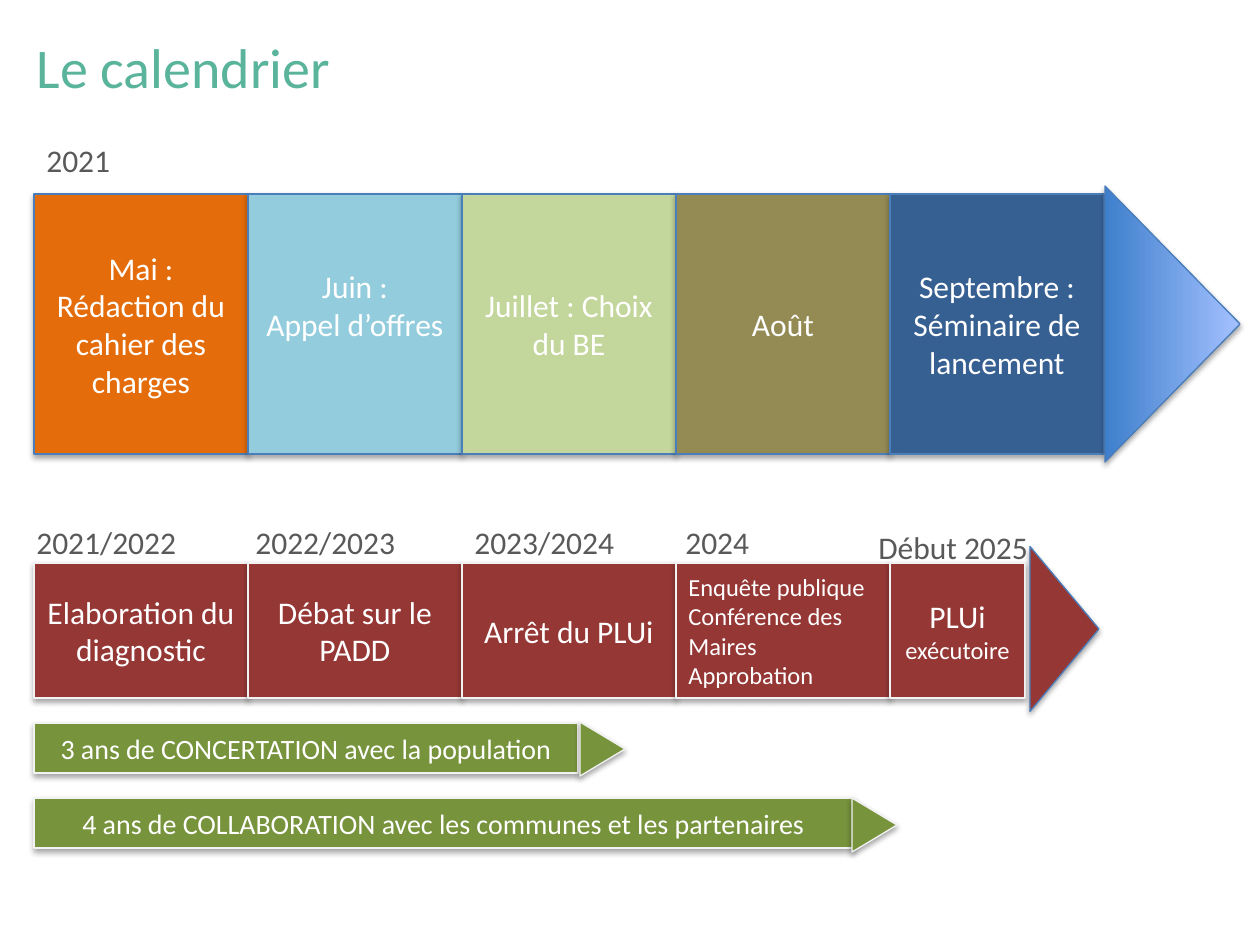
from pptx import Presentation
from pptx import util as u
from pptx.dml.color import RGBColor
from pptx.enum import shapes, text

SCALE = 914400 / 126
LEFT, STEP = 34, 214
WHITE, GREY, PALE, BLUE, RED, GREEN = "FFFFFF", "595959", "F2F2F2", "4A7EBB", "953735", "77933C"

prs = Presentation()
prs.slide_width, prs.slide_height = u.Inches(10), u.Inches(7.5)
s = prs.slides.add_slide(prs.slide_layouts[5])


def write(sp, content, size, color, align=text.PP_ALIGN.LEFT, anchor=text.MSO_ANCHOR.TOP):
    tf = sp.text_frame
    tf.text = content
    tf.word_wrap = True
    tf.vertical_anchor = anchor
    for p in tf.paragraphs:
        p.alignment = align
        for r in p.runs:
            r.font.size = u.Pt(size)
            r.font.name = "Calibri"
            r.font.color.rgb = RGBColor.from_string(color)


def block(kind, x, y, w, h, fill, line):
    sp = s.shapes.add_shape(kind, *[u.Emu(round(v * SCALE)) for v in (x, y, w, h)])
    sp.fill.solid()
    sp.fill.fore_color.rgb = RGBColor.from_string(fill)
    sp.line.color.rgb = RGBColor.from_string(line)
    sp.line.width = u.Pt(0.75)
    return sp


title = s.shapes.title
title.left, title.top, title.width, title.height = [u.Emu(round(v * SCALE)) for v in (24, 26, 1206, 79)]
write(title, "Le calendrier", 32, "5AB49C")

center, middle = text.PP_ALIGN.CENTER, text.MSO_ANCHOR.MIDDLE
rect, triangle = shapes.MSO_SHAPE.RECTANGLE, shapes.MSO_SHAPE.ISOSCELES_TRIANGLE

months = [
    ("Mai :\nRédaction du cahier des charges", "E46C0A", 6),
    ("Juin :\nAppel d’offres", "93CDDD", 44),
    ("Juillet : Choix du BE", "C3D69B", 6),
    ("Août", "948A54", 6),
    ("Septembre : Séminaire de lancement", "376092", 6),
]
for i, (content, fill, bottom) in enumerate(months):
    sp = block(rect, LEFT + i * STEP, 194, STEP, 260, fill, BLUE)
    write(sp, content, 18, WHITE, center, middle)
    sp.text_frame.margin_bottom = u.Emu(round(bottom * SCALE))

phases = [
    ("Elaboration du diagnostic", 18, STEP, center),
    ("Débat sur le PADD", 18, STEP, center),
    ("Arrêt du PLUi", 18, STEP, center),
    ("Enquête publique\nConférence des Maires\nApprobation", 14, STEP, text.PP_ALIGN.LEFT),
    ("PLUi ", 18, 135, center),
]
for i, (content, size, w, align) in enumerate(phases):
    sp = block(rect, LEFT + i * STEP, 563, w, 135, RED, PALE)
    write(sp, content, size, WHITE, align, middle)

r = sp.text_frame.paragraphs[0].add_run()
r.text = "exécutoire"
r.font.size = u.Pt(14)
r.font.name = "Calibri"
r.font.color.rgb = RGBColor.from_string(WHITE)

labels = [
    ("2021", 34, 135),
    ("2021/2022", 24, 517),
    ("2022/2023", 243, 517),
    ("2023/2024", 462, 517),
    ("2024", 673, 517),
    ("Début 2025", 866, 522),
]
for content, x, y in labels:
    sp = s.shapes.add_textbox(*[u.Emu(round(v * SCALE)) for v in (x, y, 202, 50)])
    write(sp, content, 18, GREY)

bars = [
    ("3 ans de CONCERTATION avec la population", 723, 544),
    ("4 ans de COLLABORATION avec les communes et les partenaires", 798, 819),
]
for content, y, w in bars:
    sp = block(rect, LEFT, y, w, 50, GREEN, PALE)
    write(sp, content, 16, WHITE, center, middle)

heads = [
    (580, 749, 45, 54, GREEN, PALE),
    (852, 825, 45, 54, GREEN, PALE),
    (1030, 629, 69, 165, RED, BLUE),
    (1105, 324, 135, 276, BLUE, BLUE),
]
for x, cy, depth, span, fill, line in heads:
    sp = block(triangle, x + (depth - span) / 2, cy - depth / 2, span, depth, fill, line)
    sp.rotation = 90

sp.fill.gradient()
sp.fill.gradient_angle = 90
for stop, color in zip(sp.fill.gradient_stops, ("3E7FCC", "A4C1FF")):
    stop.color.rgb = RGBColor.from_string(color)

prs.save("out.pptx")
